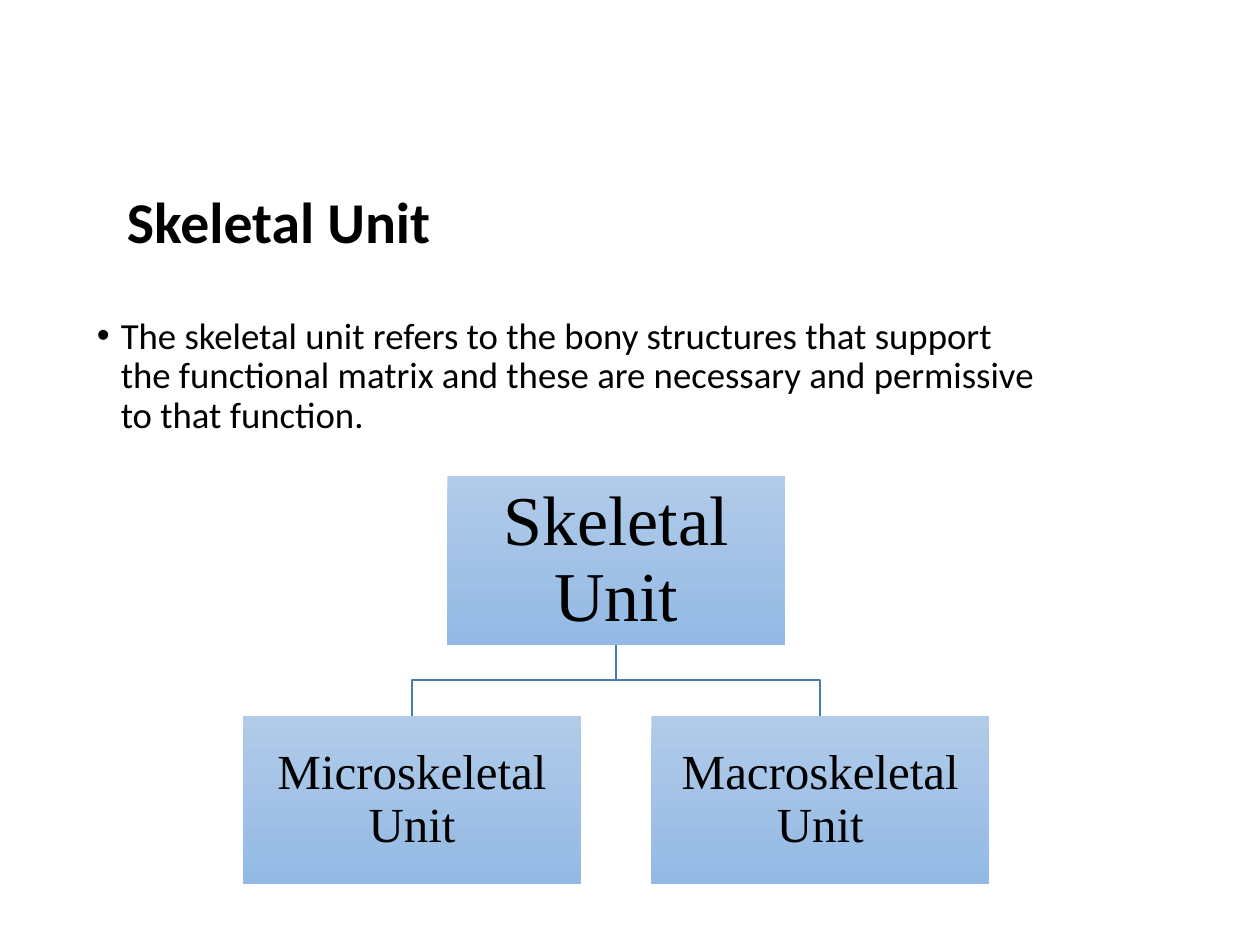
from lxml.etree import SubElement
from pptx import Presentation
from pptx.dml.color import RGBColor
from pptx.enum.shapes import MSO_SHAPE
from pptx.enum.text import MSO_ANCHOR, PP_ALIGN
from pptx.oxml.ns import qn
from pptx.util import Inches, Pt

NODE_WIDTH, NODE_HEIGHT = 2.68, 1.34
CHILD_GAP, LEVEL_GAP = 0.56, 0.56


def color(hex_code):
    return RGBColor.from_string(hex_code)


def write(para, text, size, font, bold=False):
    para.line_spacing = 0.9
    span = para.add_run()
    span.text = text
    span.font.size = Pt(size)
    span.font.name = font
    span.font.bold = bold
    span.font.color.rgb = color("000000")


def add_title(page, left, top, width, height):
    box = page.shapes.add_textbox(Inches(left), Inches(top), Inches(width), Inches(height))
    frame = box.text_frame
    frame.word_wrap = True
    frame.vertical_anchor = MSO_ANCHOR.MIDDLE
    write(frame.paragraphs[0], "Skeletal Unit", 33, "Calibri", bold=True)


def add_body(page, left, top, width, height):
    box = page.shapes.add_textbox(Inches(left), Inches(top), Inches(width), Inches(height))
    frame = box.text_frame
    frame.word_wrap = True
    frame.margin_top = Inches(0.9)
    para = frame.paragraphs[0]
    write(
        para,
        "The skeletal unit refers to the bony structures that support the functional "
        "matrix and these are necessary and permissive to that function.",
        21,
        "Calibri",
    )
    properties = para._p.get_or_add_pPr()
    properties.set("marL", str(Inches(0.19)))
    properties.set("indent", str(-Inches(0.19)))
    SubElement(properties, qn("a:buFont")).set("typeface", "Arial")
    SubElement(properties, qn("a:buChar")).set("char", "•")


def add_node(page, left, top, text, size, margin):
    node = page.shapes.add_shape(
        MSO_SHAPE.RECTANGLE, Inches(left), Inches(top), Inches(NODE_WIDTH), Inches(NODE_HEIGHT)
    )
    node.shadow.inherit = False
    node.line.fill.background()
    node.fill.gradient()
    node.fill.gradient_angle = 270
    for stop, shade in zip(node.fill.gradient_stops, ("B1CBE9", "93B9E4")):
        stop.color.rgb = color(shade)
    frame = node.text_frame
    frame.word_wrap = True
    frame.vertical_anchor = MSO_ANCHOR.MIDDLE
    frame.margin_left = frame.margin_right = Inches(margin)
    frame.margin_top = frame.margin_bottom = Inches(margin)
    para = frame.paragraphs[0]
    para.alignment = PP_ALIGN.CENTER
    write(para, text, size, "Times New Roman")


def add_branch(page, start_x, start_y, end_x, end_y):
    """Draw a line that goes down, across and down again."""
    middle_y = (start_y + end_y) / 2
    points = [(start_x, middle_y), (end_x, middle_y), (end_x, end_y)]
    builder = page.shapes.build_freeform(Inches(start_x), Inches(start_y))
    builder.add_line_segments([(Inches(x), Inches(y)) for x, y in points], close=False)
    branch = builder.convert_to_shape()
    branch.shadow.inherit = False
    branch.fill.background()
    branch.line.color.rgb = color("497CAB")
    branch.line.width = Pt(1)


def add_hierarchy(page, left, top, root, children):
    step = NODE_WIDTH + CHILD_GAP
    root_left = left + step * (len(children) - 1) / 2
    root_center = root_left + NODE_WIDTH / 2
    root_bottom = top + NODE_HEIGHT
    child_top = root_bottom + LEVEL_GAP
    add_node(page, root_left, top, root, 40, 0.03)
    for index, child in enumerate(children):
        child_left = left + index * step
        add_branch(page, root_center, root_bottom, child_left + NODE_WIDTH / 2, child_top)
        add_node(page, child_left, child_top, child, 28, 0.02)


def main():
    deck = Presentation()
    deck.slide_width, deck.slide_height = Inches(10), Inches(7.5)
    page = deck.slides.add_slide(deck.slide_layouts[6])
    add_title(page, 0.91, 1.15, 6.94, 1.27)
    add_body(page, 0.67, 1.62, 7.72, 5.43)
    add_hierarchy(
        page, 1.93, 3.78, "Skeletal Unit", ["Microskeletal Unit", "Macroskeletal Unit"]
    )
    deck.save("out.pptx")


if __name__ == "__main__":
    main()
